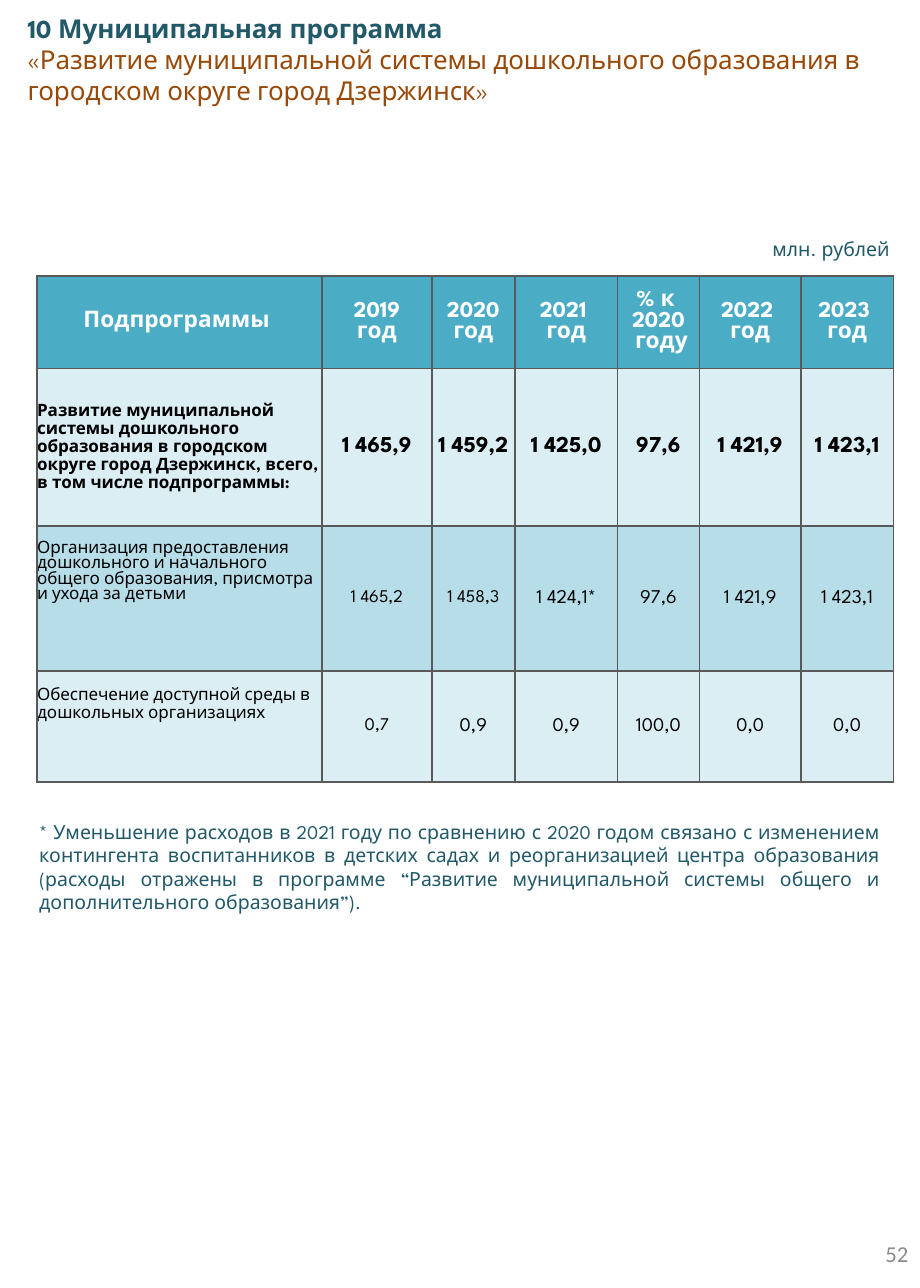
from dataclasses import dataclass

from lxml.etree import SubElement
from pptx import Presentation
from pptx.dml.color import RGBColor
from pptx.enum.text import MSO_ANCHOR, MSO_AUTO_SIZE, PP_ALIGN
from pptx.oxml.ns import qn
from pptx.slide import Slide
from pptx.table import _Cell
from pptx.text.text import TextFrame
from pptx.util import Inches, Pt

WIDTH, HEIGHT = Pt(567), Pt(793.75)


@dataclass(frozen=True)
class Theme:
    font: str = "League Spartan"
    page_font: str = "Calibri"
    teal: str = "215968"
    brown: str = "984807"
    grey: str = "8C8C8C"
    white: str = "FFFFFF"
    black: str = "000000"
    border: str = "595959"
    header: str = "4BACC6"
    light: str = "DBEEF4"
    middle: str = "B7DEE8"
    title: float = 16
    heading: float = 14
    body: float = 12
    compact: float = 11
    label: float = 10.5


THEME = Theme()


@dataclass(frozen=True)
class Style:
    size: float
    color: str
    bold: bool = False
    font: str = THEME.font


@dataclass(frozen=True)
class Box:
    left: float
    top: float
    width: float
    height: float
    lines: list[str]
    styles: list[Style]
    align: PP_ALIGN = PP_ALIGN.LEFT
    margin_y: float = 0.05
    anchor: MSO_ANCHOR = MSO_ANCHOR.TOP
    grows: bool = True


@dataclass(frozen=True)
class Row:
    height: float
    label: str
    values: list[str]
    fill: str
    label_style: Style
    sizes: list[float]
    label_align: PP_ALIGN = PP_ALIGN.LEFT
    label_anchor: MSO_ANCHOR = MSO_ANCHOR.MIDDLE
    label_top: float = 0
    spacing: float = 1


def across(percent: float) -> int:
    return round(WIDTH * percent / 100)


def down(percent: float) -> int:
    return round(HEIGHT * percent / 100)


def write(tf: TextFrame, lines: list[str], styles: list[Style],
          align: PP_ALIGN, spacing: float = 1) -> None:
    tf.text = "\n".join(lines)
    for p, style in zip(tf.paragraphs, styles):
        p.alignment = align
        if spacing != 1:
            p.line_spacing = spacing
        for r in p.runs:
            r.font.name = style.font
            r.font.size = Pt(style.size)
            r.font.bold = style.bold
            r.font.color.rgb = RGBColor.from_string(style.color)


def add_box(s: Slide, box: Box) -> None:
    sp = s.shapes.add_textbox(across(box.left), down(box.top),
                              across(box.width), down(box.height))
    tf = sp.text_frame
    tf.word_wrap = True
    tf.auto_size = MSO_AUTO_SIZE.SHAPE_TO_FIT_TEXT if box.grows else MSO_AUTO_SIZE.NONE
    tf.vertical_anchor = box.anchor
    tf.margin_top = tf.margin_bottom = Inches(box.margin_y)
    write(tf, box.lines, box.styles, box.align)


def paint_cell(cell: _Cell, fill: str) -> None:
    tcPr = cell._tc.get_or_add_tcPr()
    for side in ("a:lnL", "a:lnR", "a:lnT", "a:lnB"):
        ln = SubElement(tcPr, qn(side), w=str(Pt(1)))
        SubElement(SubElement(ln, qn("a:solidFill")), qn("a:srgbClr"), val=THEME.border)
    cell.fill.solid()
    cell.fill.fore_color.rgb = RGBColor.from_string(fill)
    cell.margin_left = cell.margin_right = cell.margin_top = cell.margin_bottom = 0
    cell.vertical_anchor = MSO_ANCHOR.MIDDLE


def add_budget_table(s: Slide, left: float, top: float,
                     columns: list[float], rows: list[Row]) -> None:
    frame = s.shapes.add_table(len(rows), len(columns), across(left), down(top),
                               across(sum(columns)), down(sum(r.height for r in rows)))
    table = frame.table
    table.first_row = table.horz_banding = False
    for column, width in zip(table.columns, columns):
        column.width = across(width)
    for i, row in enumerate(rows):
        table.rows[i].height = down(row.height)
        for j, text in enumerate([row.label, *row.values]):
            cell = table.cell(i, j)
            paint_cell(cell, row.fill)
            if j == 0:
                cell.vertical_anchor = row.label_anchor
                cell.margin_top = Inches(row.label_top)
                write(cell.text_frame, [text], [row.label_style],
                      row.label_align, row.spacing)
            else:
                lines = text.split("\n")
                style = Style(row.sizes[j - 1], row.label_style.color, row.label_style.bold)
                write(cell.text_frame, lines, [style] * len(lines), PP_ALIGN.CENTER)


HEADER = Style(THEME.heading, THEME.white, True)
TOTAL = Style(THEME.label, THEME.black, True)
PART = Style(THEME.label, THEME.black)
NOTE = Style(THEME.body, THEME.teal)

COLUMNS = [30.98, 11.94, 9.02, 11.17, 8.89, 11.05, 10.03]
ROWS = [
    Row(7.17, "Подпрограммы ",
        ["2019\nгод", "2020\nгод", "2021 \nгод", "% к \n2020\n году", "2022 \nгод", "2023 \nгод"],
        THEME.header, HEADER, [THEME.heading] * 6, PP_ALIGN.CENTER),
    Row(12.25, "Развитие муниципальной системы дошкольного образования в городском "
        "округе город Дзержинск, всего, в том числе подпрограммы:",
        ["1 465,9", "1 459,2", "1 425,0", "97,6", "1 421,9", "1 423,1"],
        THEME.light, TOTAL, [THEME.heading] * 6, spacing=1.15),
    Row(11.25, "Организация предоставления дошкольного и начального общего "
        "образования, присмотра и ухода за детьми",
        ["1 465,2", "1 458,3", "1 424,1*", "97,6", "1 421,9", "1 423,1"],
        THEME.middle, PART, [THEME.compact] * 2 + [THEME.body] * 4,
        label_anchor=MSO_ANCHOR.TOP, label_top=0.13),
    Row(8.62, "Обеспечение доступной среды в дошкольных организациях",
        ["0,7", "0,9", "0,9", "100,0", "0,0", "0,0"],
        THEME.light, PART, [THEME.compact] + [THEME.body] * 5,
        label_anchor=MSO_ANCHOR.TOP, label_top=0.13, spacing=1.15),
]
BOXES = [
    Box(80.33, 17.88, 17.64, 2.81, ["млн. рублей"], [NOTE], PP_ALIGN.RIGHT, 0.06),
    Box(1.75, 0.54, 96.23, 8.26,
        ["10 Муниципальная программа",
         "«Развитие муниципальной системы дошкольного образования в "
         "городском округе город Дзержинск»"],
        [Style(THEME.title, THEME.teal, True), Style(THEME.title, THEME.brown)]),
    Box(76.63, 94.69, 23.37, 5.31, ["52"],
        [Style(THEME.heading, THEME.grey, font=THEME.page_font)],
        PP_ALIGN.RIGHT, 0.06, MSO_ANCHOR.MIDDLE, False),
    Box(3.02, 63.22, 93.95, 8.26,
        ["* Уменьшение расходов в 2021 году по сравнению с 2020 годом связано с "
         "изменением контингента воспитанников в детских садах и реорганизацией "
         "центра образования (расходы отражены в программе “Развитие муниципальной "
         "системы общего и дополнительного образования”)."],
        [NOTE], PP_ALIGN.JUSTIFY),
]


def main() -> None:
    prs = Presentation()
    prs.slide_width, prs.slide_height = WIDTH, HEIGHT
    s = prs.slides.add_slide(prs.slide_layouts[6])
    add_budget_table(s, 4.03, 21.42, COLUMNS, ROWS)
    for box in BOXES:
        add_box(s, box)
    prs.save("out.pptx")


if __name__ == "__main__":
    main()
